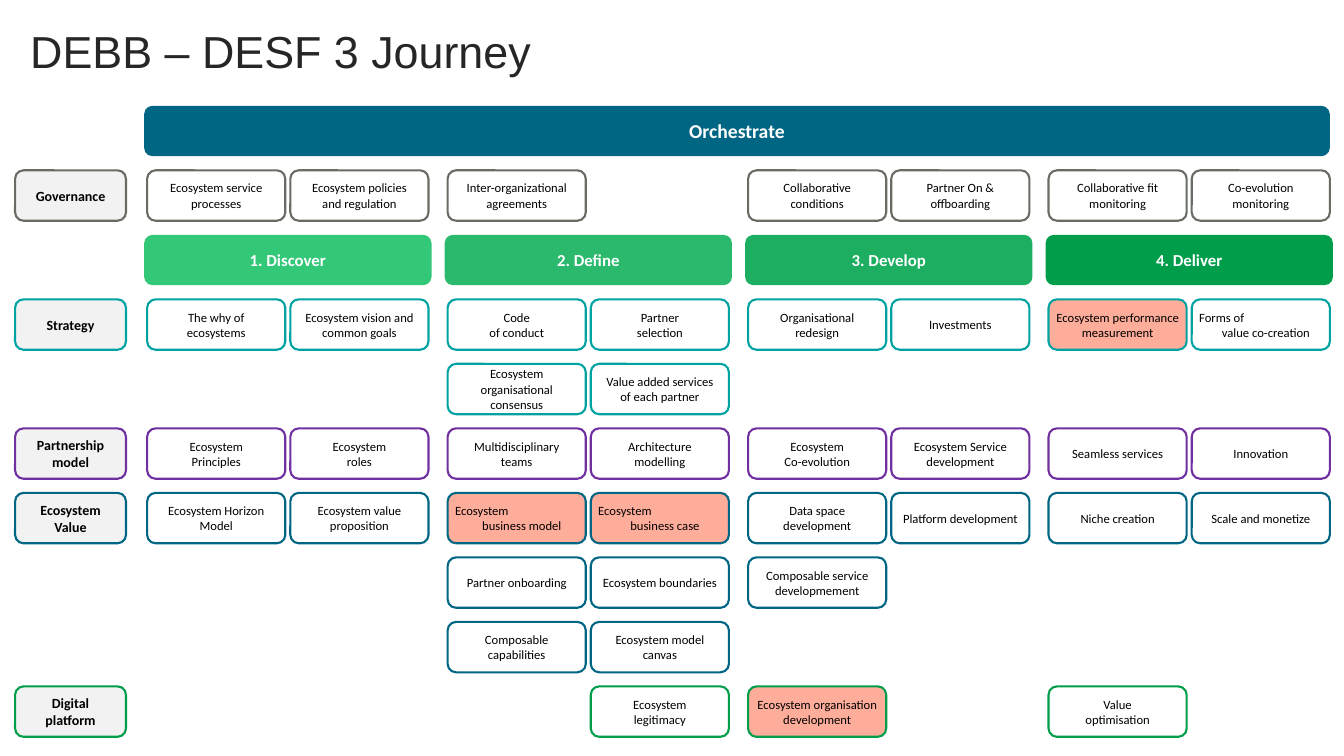
import pptx
import pptx.dml.color
import pptx.enum.shapes
import pptx.enum.text
import pptx.util
from pptx.util import Inches

ALIGN = pptx.enum.text.PP_ALIGN
ANCHOR = pptx.enum.text.MSO_ANCHOR

COLOURS = {
    "title": "262626", "text": "000000", "white": "FFFFFF",
    "label": "F2F2F2", "highlight": "FFAD9B",
    "grey": "686D64", "teal": "00A3A1", "purple": "7030A0",
    "blue": "006683", "green": "009E4B",
    "discover": "32C878", "define": "2BB96D", "develop": "1DAE61",
}

TOP, ROW_STEP, HEIGHT = 1.05, 0.64, 0.5
LABEL_LEFT, LABEL_WIDTH = 0.15, 1.1
PHASE_LEFT, PHASE_STEP, PHASE_WIDTH = 1.43, 2.98, 2.85
CARD_INSET, CARD_STEP, CARD_WIDTH = 0.03, 1.42, 1.37
PHASE_ROW = 2

PHASES = [("1. Discover", "discover"), ("2. Define", "define"),
          ("3. Develop", "develop"), ("4. Deliver", "green")]

# Row number, label, outline colour
LABELS = [
    (1, "Governance", "grey"),
    (3, "Strategy", "teal"),
    (5, "Partnership model", "purple"),
    (6, "Ecosystem\nValue", "blue"),
    (9, "Digital\nplatform", "green"),
]

# Row number, outline colour, two cards for each phase
CARDS = [
    (1, "grey", ["Ecosystem service processes", "Ecosystem policies\nand regulation",
                 "Inter-organizational agreements", None,
                 "Collaborative\nconditions", "Partner On & offboarding",
                 "Collaborative fit monitoring", "Co-evolution\nmonitoring"]),
    (3, "teal", ["The why of\necosystems", "Ecosystem vision and common goals",
                 "Code\nof conduct", "Partner\nselection",
                 "Organisational\nredesign", "Investments",
                 "Ecosystem performance measurement", "Forms of\nvalue co-creation"]),
    (4, "teal", [None, None, "Ecosystem organisational consensus",
                 "Value added services\nof each partner"]),
    (5, "purple", ["Ecosystem\nPrinciples", "Ecosystem\nroles",
                   "Multidisciplinary\nteams", "Architecture\nmodelling",
                   "Ecosystem\nCo-evolution", "Ecosystem Service development",
                   "Seamless services", "Innovation"]),
    (6, "blue", ["Ecosystem Horizon Model", "Ecosystem value proposition",
                 "Ecosystem\nbusiness model", "Ecosystem\nbusiness case",
                 "Data space development", "Platform development",
                 "Niche creation", "Scale and monetize"]),
    (7, "blue", [None, None, "Partner onboarding", "Ecosystem boundaries",
                 "Composable service developmement"]),
    (8, "blue", [None, None, "Composable capabilities", "Ecosystem model canvas"]),
    (9, "green", [None, None, None, "Ecosystem\nlegitimacy",
                  "Ecosystem organisation development", None,
                  "Value\noptimisation"]),
]

HIGHLIGHTED = {"Ecosystem performance measurement", "Ecosystem\nbusiness model",
               "Ecosystem\nbusiness case", "Ecosystem organisation development"}
STAGGERED = {"Forms of\nvalue co-creation", "Ecosystem\nbusiness model",
             "Ecosystem\nbusiness case"}


def colour(name):
    return pptx.dml.color.RGBColor.from_string(COLOURS[name])


def row_top(row):
    return TOP + row * ROW_STEP


def set_font(para, name, size, colour_name, bold=False):
    para.font.name = name
    para.font.size = pptx.util.Pt(size)
    para.font.bold = bold
    para.font.color.rgb = colour(colour_name)


def add_box(page, text, left, row, width, fill, size,
            outline=None, text_colour="text", bold=False):
    box = page.shapes.add_shape(
        pptx.enum.shapes.MSO_SHAPE.ROUNDED_RECTANGLE,
        Inches(left), Inches(row_top(row)), Inches(width), Inches(HEIGHT))
    box.shadow.inherit = False
    box.fill.solid()
    box.fill.fore_color.rgb = colour(fill)
    if outline:
        box.line.color.rgb = colour(outline)
        box.line.width = pptx.util.Pt(1.5)
    else:
        box.line.fill.background()
    frame = box.text_frame
    frame.word_wrap = True
    frame.vertical_anchor = ANCHOR.MIDDLE
    frame.margin_left = frame.margin_right = Inches(0.05)
    frame.margin_top = frame.margin_bottom = Inches(0.05)
    frame.text = text
    for para in frame.paragraphs:
        para.alignment = ALIGN.CENTER
        set_font(para, "Calibri", size, text_colour, bold)
    return box


def stagger(box):
    """Put the first line at the left and nudge the second to the right."""
    first, second = box.text_frame.paragraphs
    first.alignment = ALIGN.LEFT
    second._p.get_or_add_pPr().set("marL", str(int(Inches(0.1))))


def add_title(page, text):
    box = page.shapes.add_textbox(0, 0, Inches(10.79), Inches(1.05))
    frame = box.text_frame
    frame.word_wrap = True
    frame.vertical_anchor = ANCHOR.TOP
    frame.margin_left = frame.margin_top = Inches(0.3)
    frame.margin_right, frame.margin_bottom = Inches(0.1), Inches(0.05)
    frame.text = text
    para = frame.paragraphs[0]
    para.line_spacing = 0.9
    set_font(para, "Arial", 32, "title")


def add_phases(page):
    add_box(page, "Orchestrate", PHASE_LEFT, 0, 11.76, "blue", 14,
            text_colour="white", bold=True)
    for index, (name, fill) in enumerate(PHASES):
        add_box(page, name, PHASE_LEFT + index * PHASE_STEP, PHASE_ROW,
                PHASE_WIDTH, fill, 12, text_colour="white", bold=True)


def add_cards(page, row, outline, texts):
    for index, text in enumerate(texts):
        if text is None:
            continue
        phase, slot = divmod(index, 2)
        left = PHASE_LEFT + CARD_INSET + phase * PHASE_STEP + slot * CARD_STEP
        fill = "highlight" if text in HIGHLIGHTED else "white"
        card = add_box(page, text, left, row, CARD_WIDTH, fill, 9, outline)
        if text in STAGGERED:
            stagger(card)


def main():
    deck = pptx.Presentation()
    deck.slide_width, deck.slide_height = Inches(13.33), Inches(7.5)
    page = deck.slides.add_slide(deck.slide_layouts[6])
    add_title(page, "DEBB – DESF 3 Journey")
    add_phases(page)
    for row, text, outline in LABELS:
        add_box(page, text, LABEL_LEFT, row, LABEL_WIDTH, "label", 10,
                outline, bold=True)
    for row, outline, texts in CARDS:
        add_cards(page, row, outline, texts)
    deck.save("out.pptx")


if __name__ == "__main__":
    main()
